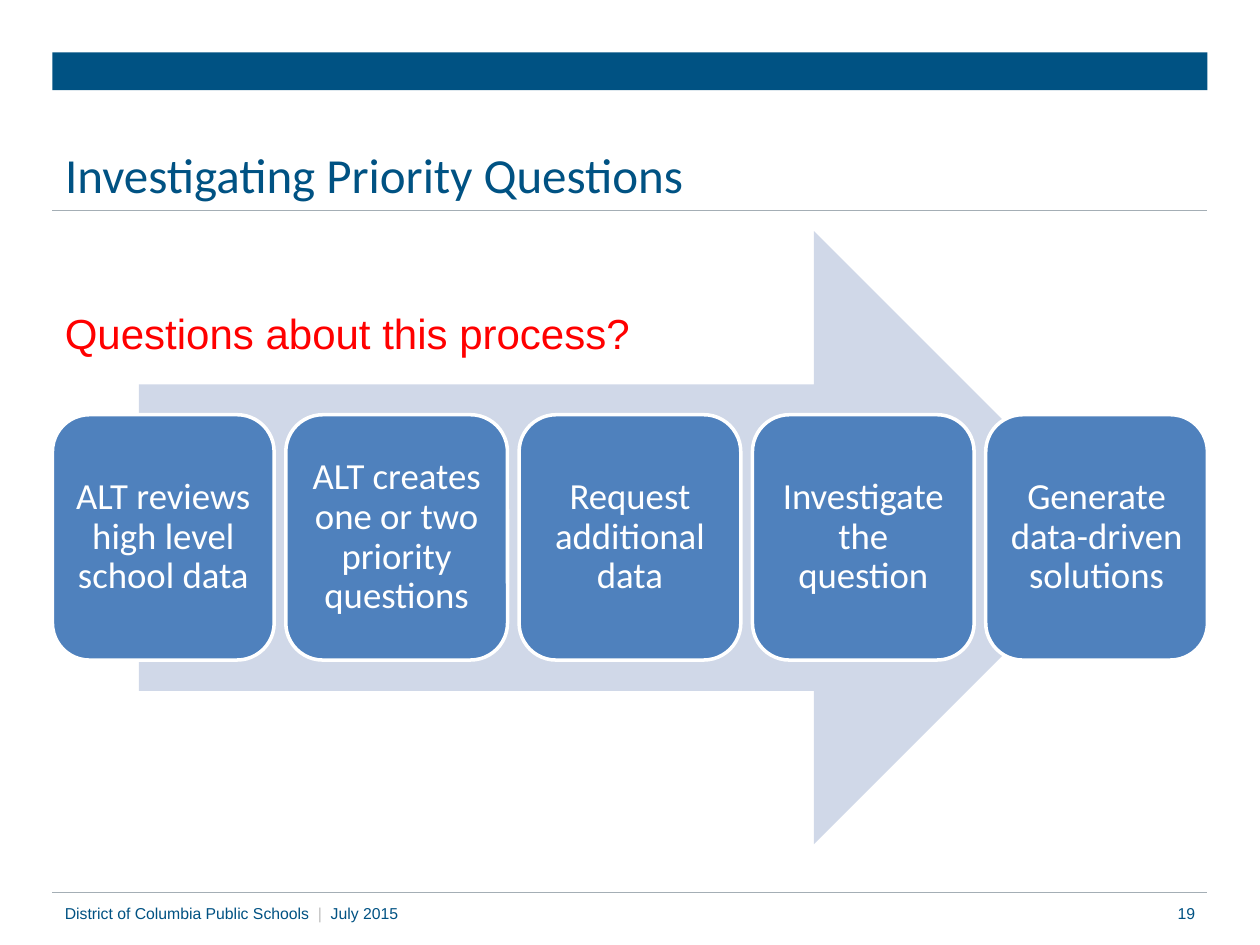
from lxml import etree
from pptx import Presentation
from pptx import util as u
from pptx.dml.color import RGBColor
from pptx.enum import shapes, text
from pptx.oxml.ns import qn

TITLE = "Investigating Priority Questions"
PROMPT = "Questions about this process?"
STEPS = [
    "ALT reviews high level school data",
    "ALT creates one or two priority questions",
    "Request additional data",
    "Investigate the question",
    "Generate data-driven solutions",
]
NAVY, GRAY, RED, WHITE = "005283", "BFBFBF", "FF0000", "FFFFFF"
ARROW, CARD, RULE = "D0D8E8", "4F81BD", "A4AEB5"
FOOTER = [("District of Columbia Public Schools  ", NAVY), ("|", GRAY), ("  July 2015", NAVY)]
PAGE_NUMBER = [("19", NAVY)]

LEFT, WIDTH = 30, 660
CARD_TOP, CARD_WIDTH, CARD_HEIGHT = 237, 126.7, 140.2
RULES = [120, 510]


def color(value):
    return RGBColor.from_string(value)


def place(item, left, top, width, height):
    item.left, item.top = u.Pt(left), u.Pt(top)
    item.width, item.height = u.Pt(width), u.Pt(height)


def write(item, spans, font, size, align="LEFT", anchor="MIDDLE", spacing=None):
    frame = item.text_frame
    frame.word_wrap = True
    frame.vertical_anchor = getattr(text.MSO_ANCHOR, anchor)
    para = frame.paragraphs[0]
    para.alignment = getattr(text.PP_ALIGN, align)
    if spacing:
        para.line_spacing = spacing
    for words, shade in spans:
        span = para.add_run()
        span.text = words
        span.font.name, span.font.size = font, u.Pt(size)
        span.font.color.rgb = color(shade)


def add_block(page, kind, left, top, width, height, fill, outline=None):
    block = page.shapes.add_shape(kind, *map(u.Pt, (left, top, width, height)))
    block.shadow.inherit = False
    block.fill.solid()
    block.fill.fore_color.rgb = color(fill)
    if outline:
        block.line.color.rgb = color(outline)
        block.line.width = u.Pt(2)
    else:
        block.line.fill.background()
    return block


def add_label(page, left, top, width, height, spans, size, **style):
    box = page.shapes.add_textbox(*map(u.Pt, (left, top, width, height)))
    write(box, spans, "Arial", size, **style)


def add_rule(page, top):
    rule = page.shapes.add_connector(
        shapes.MSO_CONNECTOR.STRAIGHT, *map(u.Pt, (LEFT, top, LEFT + WIDTH, top)))
    rule.line.color.rgb = color(RULE)
    rule.line.width = u.Pt(0.5)
    etree.SubElement(rule._element.spPr, qn("a:effectLst"))


def add_steps(page):
    kinds = shapes.MSO_SHAPE
    add_block(page, kinds.RIGHT_ARROW, 79.3, 132, 561, 350.4, ARROW)
    pitch = (WIDTH - CARD_WIDTH) / (len(STEPS) - 1)
    for index, step in enumerate(STEPS):
        card = add_block(page, kinds.ROUNDED_RECTANGLE, LEFT + index * pitch,
                         CARD_TOP, CARD_WIDTH, CARD_HEIGHT, CARD, WHITE)
        frame = card.text_frame
        frame.margin_left = frame.margin_right = u.Pt(6.5)
        frame.margin_top = frame.margin_bottom = u.Pt(6.5)
        write(card, [(step, WHITE)], "Calibri", 21, align="CENTER", spacing=0.9)


def main():
    """Build the slide on priority questions."""
    deck = Presentation()
    deck.slide_width, deck.slide_height = u.Pt(720), u.Pt(540)
    page = deck.slides.add_slide(deck.slide_layouts[5])
    add_block(page, shapes.MSO_SHAPE.RECTANGLE, LEFT, 30, WIDTH, 21.6, NAVY)
    for top in RULES:
        add_rule(page, top)
    place(page.shapes.title, LEFT, 51.6, WIDTH, 68.4)
    write(page.shapes.title, [(TITLE, NAVY)], "Calibri", 28, anchor="BOTTOM")
    add_label(page, LEFT, 510, 474, 24, FOOTER, 9)
    add_label(page, 516, 510, 174, 24, PAGE_NUMBER, 9, align="RIGHT")
    add_steps(page)
    add_label(page, LEFT, 172.4, 396, 36, [(PROMPT, RED)], 24, anchor="TOP")
    deck.save("out.pptx")


if __name__ == "__main__":
    main()
